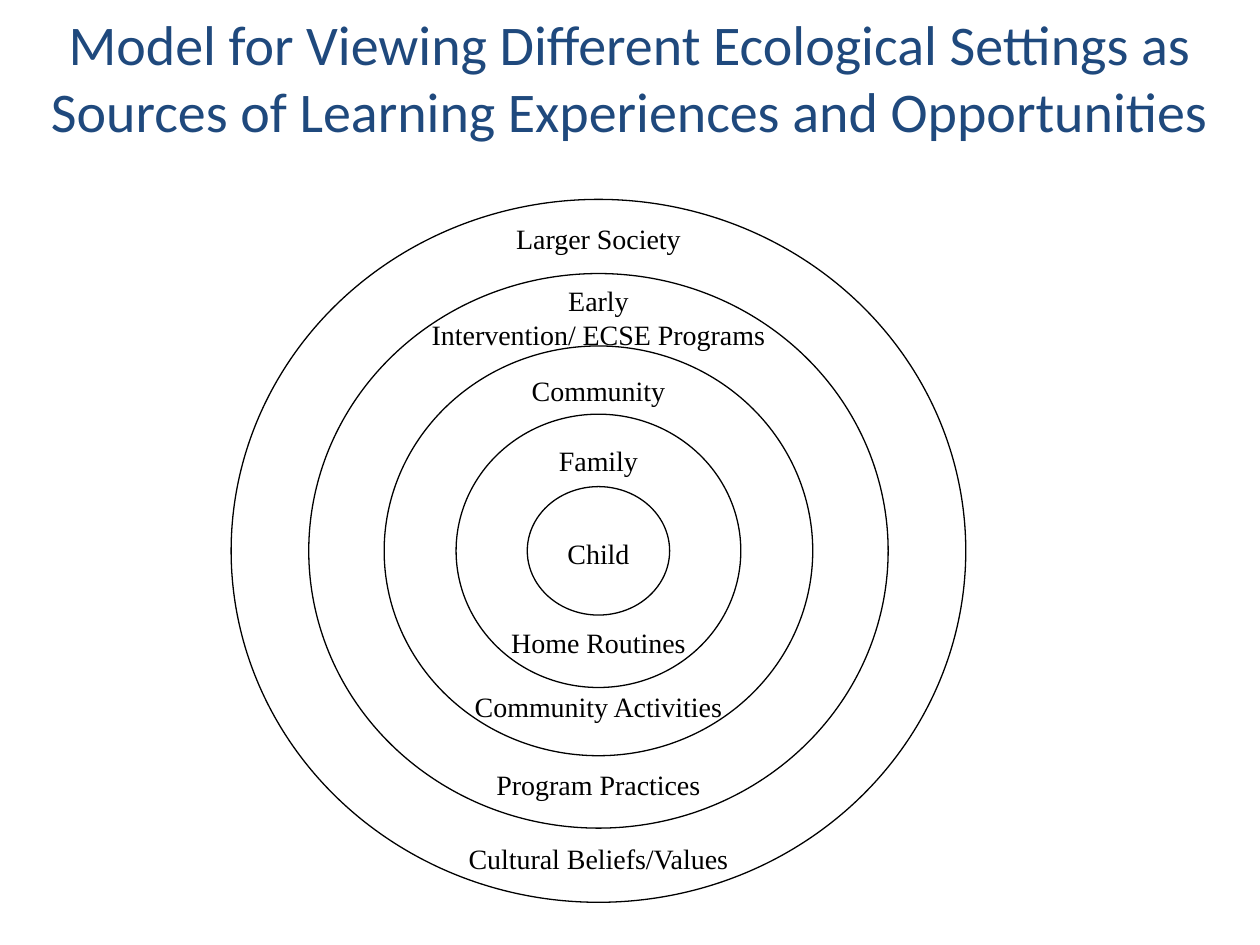
from pptx import Presentation
from pptx.dml.color import RGBColor
from pptx.enum.shapes import MSO_SHAPE
from pptx.enum.text import MSO_ANCHOR, MSO_AUTO_SIZE, PP_ALIGN
from pptx.util import Cm, Pt

BLACK = RGBColor(0x00, 0x00, 0x00)
NAVY = RGBColor(0x1F, 0x49, 0x7D)

TITLE = ("Model for Viewing Different Ecological Settings as "
         "Sources of Learning Experiences and Opportunities")

# Width and height in cm, from the outermost ring inwards
RINGS = [(14.81, 14.17), (11.68, 11.18), (8.64, 8.26), (5.74, 5.51), (2.87, 2.59)]

# Text, distance from the top of the diagram and height, in cm
LABELS = [
    ("Larger Society", 0.33, 0.94),
    ("Early\nIntervention/ ECSE Programs", 1.58, 1.63),
    ("Community", 3.38, 0.94),
    ("Family", 4.8, 0.94),
    ("Child", 6.68, 0.94),
    ("Home Routines", 8.46, 0.94),
    ("Community Activities", 9.76, 0.94),
    ("Program Practices", 11.33, 0.94),
    ("Cultural Beliefs/Values", 12.83, 0.94),
]
LABEL_WIDTH = 9.53


def format_text(text_frame, font_name, size, color):
    for paragraph in text_frame.paragraphs:
        paragraph.alignment = PP_ALIGN.CENTER
        for run in paragraph.runs:
            run.font.name = font_name
            run.font.size = Pt(size)
            run.font.color.rgb = color


def place_title(slide, left, top, width, height):
    title = slide.shapes.title
    title.left, title.top = Cm(left), Cm(top)
    title.width, title.height = Cm(width), Cm(height)
    text_frame = title.text_frame
    text_frame.text = TITLE
    text_frame.vertical_anchor = MSO_ANCHOR.MIDDLE
    text_frame.auto_size = MSO_AUTO_SIZE.NONE
    format_text(text_frame, "Calibri", 32, NAVY)


def add_ring(slide, center_x, center_y, width, height):
    ring = slide.shapes.add_shape(
        MSO_SHAPE.OVAL, Cm(center_x - width / 2), Cm(center_y - height / 2),
        Cm(width), Cm(height))
    ring.shadow.inherit = False
    ring.fill.background()
    ring.line.color.rgb = BLACK
    ring.line.width = Pt(0.75)


def add_label(slide, text, center_x, top, height):
    label = slide.shapes.add_textbox(
        Cm(center_x - LABEL_WIDTH / 2), Cm(top), Cm(LABEL_WIDTH), Cm(height))
    text_frame = label.text_frame
    text_frame.word_wrap = True
    text_frame.auto_size = MSO_AUTO_SIZE.SHAPE_TO_FIT_TEXT
    text_frame.text = text
    format_text(text_frame, "Times New Roman", 16, BLACK)


def add_ring_diagram(slide, left, top, width, height):
    """Draw concentric rings in the box, with the labels on its vertical axis."""
    center_x, center_y = left + width / 2, top + height / 2
    for ring_width, ring_height in RINGS:
        add_ring(slide, center_x, center_y, ring_width, ring_height)
    for text, offset, label_height in LABELS:
        add_label(slide, text, center_x, top + offset, label_height)


def main():
    presentation = Presentation()
    presentation.slide_width, presentation.slide_height = Cm(25.4), Cm(19.05)
    slide = presentation.slides.add_slide(presentation.slide_layouts[5])
    place_title(slide, 0, -0.05, 25.4, 3.18)
    add_ring_diagram(slide, 4.66, 4.02, *RINGS[0])
    presentation.save("out.pptx")


if __name__ == "__main__":
    main()
